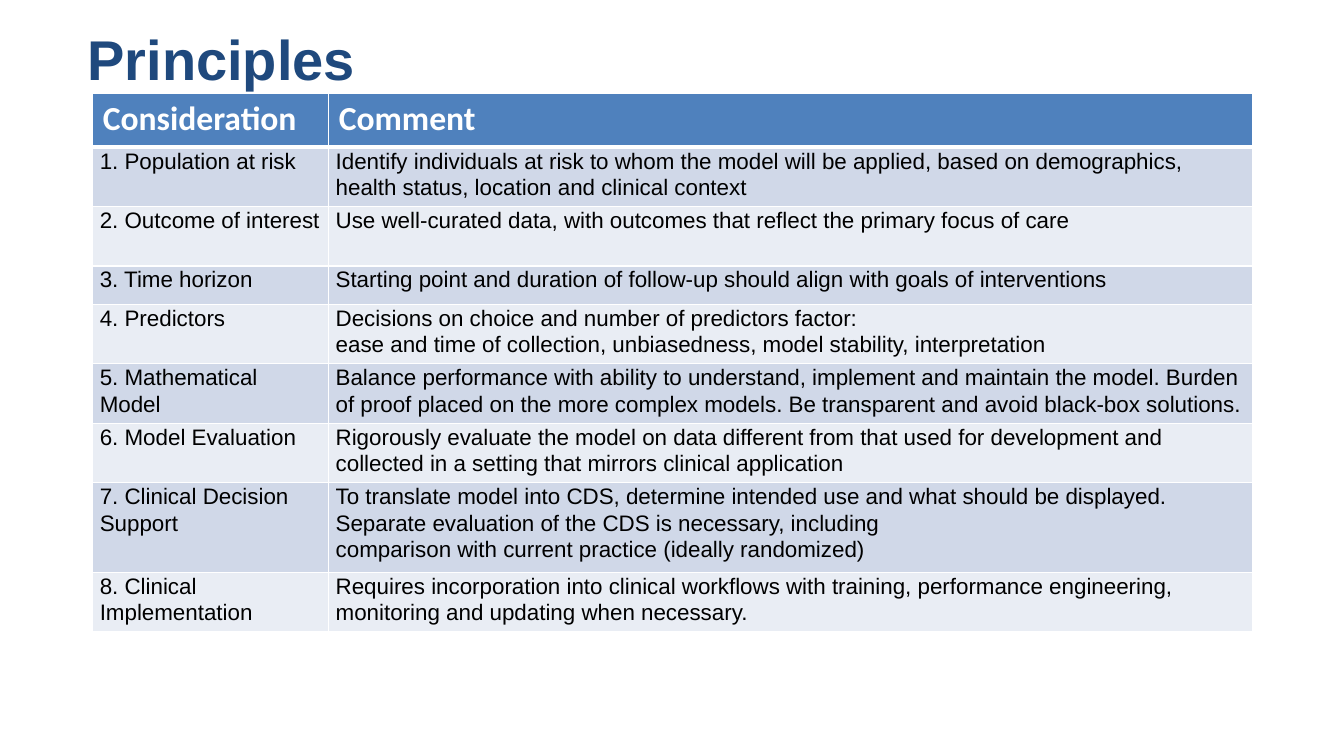
"""Build the Principles slide: a title above a table of modelling considerations."""
from dataclasses import dataclass

from lxml.etree import SubElement
from pptx import Presentation
from pptx.dml.color import RGBColor
from pptx.enum.text import MSO_ANCHOR
from pptx.oxml.ns import qn
from pptx.util import Inches, Pt

COLORS = {
    "title": "1F497D",
    "header": "4F81BD",
    "odd": "D0D8E8",
    "even": "E9EDF4",
    "white": "FFFFFF",
    "text": "000000",
}
COLUMN_WIDTHS = (2.34, 9.16)
HEADER_HEIGHT = 0.53
THIN, THICK = 1, 3


@dataclass(frozen=True)
class Principle:
    consideration: str
    comment: str
    height: float = 0.59


@dataclass(frozen=True)
class CellStyle:
    font: str
    size: int
    bold: bool
    color: str
    fill: str
    margins: tuple[float, float]
    line_spacing: float
    top: int = THIN
    bottom: int = THIN


PRINCIPLES = (
    Principle("Population at risk",
              "Identify individuals at risk to whom the model will be applied, based on "
              "demographics, health status, location and clinical context"),
    Principle("Outcome of interest",
              "Use well-curated data, with outcomes that reflect the primary focus of care"),
    Principle("Time horizon",
              "Starting point and duration of follow-up should align with goals of interventions",
              0.38),
    Principle("Predictors",
              "Decisions on choice and number of predictors factor:\n"
              "ease and time of collection, unbiasedness, model stability, interpretation"),
    Principle("Mathematical Model",
              "Balance performance with ability to understand, implement and maintain the model. "
              "Burden of proof placed on the more complex models. "
              "Be transparent and avoid black-box solutions."),
    Principle("Model Evaluation",
              "Rigorously evaluate the model on data different from that used for development "
              "and collected in a setting that mirrors clinical application"),
    Principle("Clinical Decision Support",
              "To translate model into CDS, determine intended use and what should be displayed.\n"
              "Separate evaluation of the CDS is necessary, including\n"
              "comparison with current practice (ideally randomized)",
              0.89),
    Principle("Clinical Implementation",
              "Requires incorporation into clinical workflows with training, performance "
              "engineering, monitoring and updating when necessary."),
)


def rgb(name: str) -> RGBColor:
    return RGBColor.from_string(COLORS[name])


def set_font(paragraph, name: str, size: int, bold: bool, color: str) -> None:
    font = paragraph.font
    font.name, font.size, font.bold = name, Pt(size), bold
    font.color.rgb = rgb(color)


def set_borders(cell, style: CellStyle) -> None:
    properties = cell._tc.get_or_add_tcPr()
    widths = {"a:lnL": THIN, "a:lnR": THIN, "a:lnT": style.top, "a:lnB": style.bottom}
    for position, (tag, width) in enumerate(widths.items()):
        line = SubElement(properties, qn(tag), w=str(Pt(width)))
        solid = SubElement(line, qn("a:solidFill"))
        SubElement(solid, qn("a:srgbClr"), val=COLORS["white"])
        properties.insert(position, line)


def fill_cell(cell, text: str, style: CellStyle) -> None:
    cell.text = text
    horizontal, vertical = style.margins
    cell.margin_left = cell.margin_right = Inches(horizontal)
    cell.margin_top = cell.margin_bottom = Inches(vertical)
    cell.fill.solid()
    cell.fill.fore_color.rgb = rgb(style.fill)
    set_borders(cell, style)
    for paragraph in cell.text_frame.paragraphs:
        paragraph.line_spacing = style.line_spacing
        set_font(paragraph, style.font, style.size, style.bold, style.color)


def fill_row(table, index: int, height: float, texts: tuple[str, str], style: CellStyle) -> None:
    table.rows[index].height = Inches(height)
    for column, text in enumerate(texts):
        fill_cell(table.cell(index, column), text, style)


def add_title(slide, text: str) -> None:
    box = slide.shapes.add_textbox(Inches(0.77), Inches(0.17), Inches(11.65), Inches(0.89))
    frame = box.text_frame
    frame.word_wrap = True
    frame.vertical_anchor = MSO_ANCHOR.MIDDLE
    paragraph = frame.paragraphs[0]
    paragraph.text = text
    paragraph.line_spacing = 0.9
    set_font(paragraph, "Arial", 40, True, "title")


def add_principles_table(slide) -> None:
    height = HEADER_HEIGHT + sum(principle.height for principle in PRINCIPLES)
    table = slide.shapes.add_table(
        len(PRINCIPLES) + 1, len(COLUMN_WIDTHS),
        Inches(0.92), Inches(0.93), Inches(sum(COLUMN_WIDTHS)), Inches(height)).table
    for column, width in zip(table.columns, COLUMN_WIDTHS):
        column.width = Inches(width)
    header = CellStyle("Calibri", 24, True, "white", "header", (0.1, 0.05), 1.0, bottom=THICK)
    fill_row(table, 0, HEADER_HEIGHT, ("Consideration", "Comment"), header)
    for number, principle in enumerate(PRINCIPLES, start=1):
        style = CellStyle("Arial", 16, False, "text", "odd" if number % 2 else "even",
                          (0.07, 0), 1.07, top=THICK if number == 1 else THIN)
        texts = (f"{number}. {principle.consideration}", principle.comment)
        fill_row(table, number, principle.height, texts, style)


def main() -> None:
    presentation = Presentation()
    presentation.slide_width, presentation.slide_height = Inches(13.33), Inches(7.5)
    slide = presentation.slides.add_slide(presentation.slide_layouts[6])
    add_title(slide, "Principles")
    add_principles_table(slide)
    presentation.save("out.pptx")


if __name__ == "__main__":
    main()
